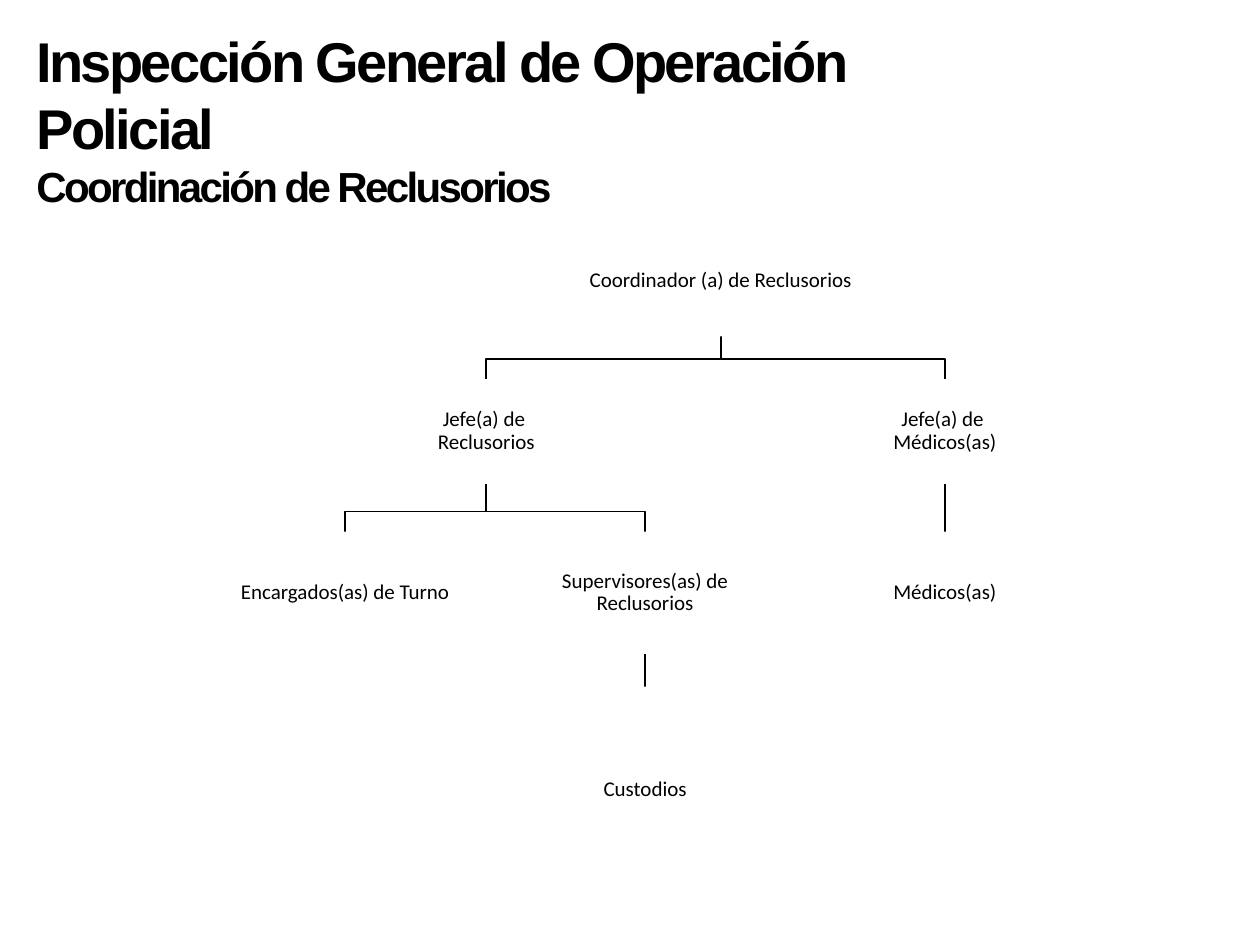
"""Build the organisation chart of the Coordinación de Reclusorios."""
from pptx import Presentation
from pptx.dml.color import RGBColor
from pptx.enum.shapes import MSO_CONNECTOR, MSO_SHAPE
from pptx.enum.text import MSO_ANCHOR, PP_ALIGN
from pptx.util import Inches, Pt
from lxml import etree

BLACK = RGBColor(0, 0, 0)
WHITE = RGBColor(255, 255, 255)
RECT = MSO_SHAPE.RECTANGLE
STRAIGHT = MSO_CONNECTOR.STRAIGHT
MIDDLE = MSO_ANCHOR.MIDDLE
CENTER = PP_ALIGN.CENTER
DRAW = "http://schemas.openxmlformats.org/drawingml/2006/main"

TITLE = [
    ("Inspección General de Operación Policial", 32),
    ("Coordinación de Reclusorios", 24),
]
ROWS = [(1.78, 0.89), (3.01, 0.83), (4.22, 0.97), (5.45, 1.63)]
NODES = {
    "head": (0, 5.72, 2.89, ["Coordinador (a) de Reclusorios"]),
    "chief": (1, 3.86, 2.07, ["Jefe(a) de ", "Reclusorios"]),
    "medic": (1, 7.5, 2.07, ["Jefe(a) de ", "Médicos(as)"]),
    "shift": (2, 2.74, 2.06, ["Encargados(as) de Turno"]),
    "super": (2, 5.12, 2.06, ["Supervisores(as) de Reclusorios"]),
    "staff": (2, 7.5, 2.07, ["Médicos(as)"]),
    "guard": (3, 5.12, 2.31, ["Custodios"]),
}
LINKS = [
    ("head", "chief"), ("head", "medic"), ("chief", "shift"),
    ("chief", "super"), ("medic", "staff"), ("super", "guard"),
]
BEND = 0.16
INSET = 0.01
MARGINS = ("margin_left", "margin_top", "margin_right", "margin_bottom")


def write(para, text, **look):
    run = para.add_run()
    run.text = text
    run.font.color.rgb = BLACK
    for name, value in look.items():
        setattr(run.font, name, value)
    return run


def add_title(slide):
    box = slide.shapes.add_textbox(*map(Inches, (0.19, 0.16, 7.46, 1.58)))
    frame = box.text_frame
    frame.word_wrap = True
    for i, (text, size) in enumerate(TITLE):
        para = frame.add_paragraph() if i else frame.paragraphs[0]
        run = write(para, text, name="Arial", size=Pt(size), bold=True)
        run._r.get_or_add_rPr().set("spc", "-150")


def add_link(slide, start, end):
    row, x, *_ = NODES[start]
    top = sum(ROWS[row])
    row, goal, *_ = NODES[end]
    low = ROWS[row][0]
    if x == goal:
        line = slide.shapes.add_connector(
            STRAIGHT, *map(Inches, (x, top, goal, low)))
        etree.SubElement(line._element.spPr, f"{{{DRAW}}}effectLst")
    else:
        turn = low - BEND
        spots = [(x, turn), (goal, turn), (goal, low)]
        pen = slide.shapes.build_freeform(Inches(x), Inches(top))
        pen.add_line_segments(
            [tuple(map(Inches, spot)) for spot in spots], close=False)
        line = pen.convert_to_shape()
        line.fill.background()
        line.shadow.inherit = False
    line.line.color.rgb = BLACK
    line.line.width = Pt(1)


def add_node(slide, row, x, width, lines):
    top, height = ROWS[row]
    box = slide.shapes.add_shape(
        RECT, *map(Inches, (x - width / 2, top, width, height)))
    box.shadow.inherit = False
    box.fill.solid()
    box.fill.fore_color.rgb = WHITE
    box.line.fill.background()
    frame = box.text_frame
    frame.word_wrap = True
    frame.vertical_anchor = MIDDLE
    for side in MARGINS:
        setattr(frame, side, Inches(INSET))
    for i, text in enumerate(lines):
        para = frame.add_paragraph() if i else frame.paragraphs[0]
        para.alignment = CENTER
        para.line_spacing = 0.9
        write(para, text, name="Calibri", size=Pt(12))


def main():
    deck = Presentation()
    deck.slide_width, deck.slide_height = Inches(10), Inches(7.5)
    slide = deck.slides.add_slide(deck.slide_layouts[6])
    add_title(slide)
    for link in LINKS:
        add_link(slide, *link)
    for node in NODES.values():
        add_node(slide, *node)
    deck.save("out.pptx")


if __name__ == "__main__":
    main()
